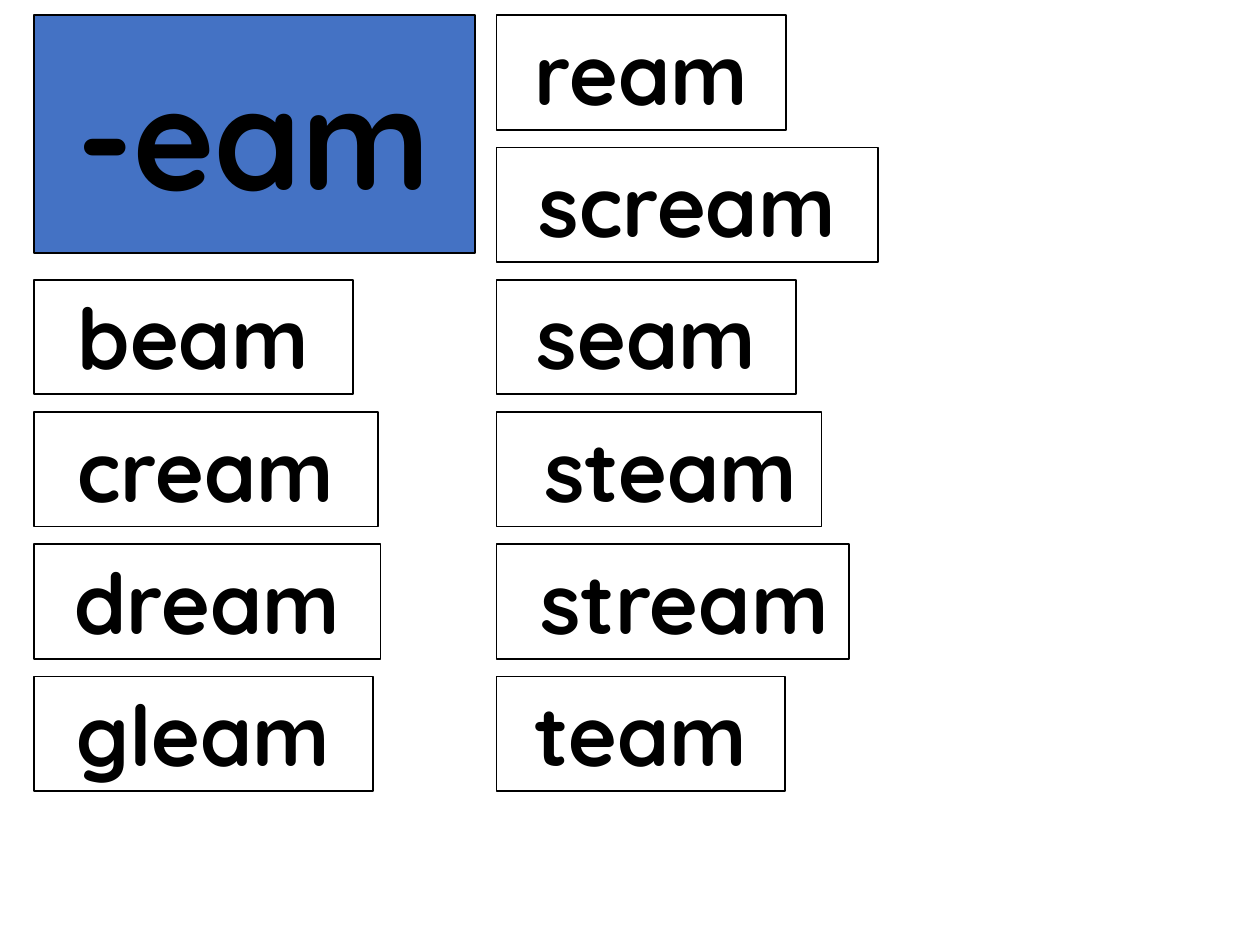
"""Build a word-family slide: the -eam ending and its word cards."""
from pptx import Presentation
from pptx.dml.color import RGBColor
from pptx.enum.shapes import MSO_SHAPE
from pptx.enum.text import MSO_ANCHOR, MSO_AUTO_SIZE, PP_ALIGN
from pptx.util import Inches, Pt

RECT = MSO_SHAPE.RECTANGLE
TOP, MIDDLE = MSO_ANCHOR.TOP, MSO_ANCHOR.MIDDLE
FIT, FIXED = MSO_AUTO_SIZE.SHAPE_TO_FIT_TEXT, MSO_AUTO_SIZE.NONE
CENTER = PP_ALIGN.CENTER

BLACK = RGBColor(0x00, 0x00, 0x00)
WHITE = RGBColor(0xFF, 0xFF, 0xFF)
BLUE = RGBColor(0x44, 0x72, 0xC4)
FONT = "Quicksand"

ENDING = "-eam"
COLUMNS = [
    {"left": 0.27, "first_row": 2, "cards": [
        ("beam", 2.53), ("cream", 2.73), ("dream", 2.75), ("gleam", 2.69)]},
    {"left": 3.94, "first_row": 0, "cards": [
        ("ream", 2.3), ("scream", 3.03), ("seam", 2.38),
        ("steam", 2.58), ("stream", 2.8), ("team", 2.29)]},
]
GRID_TOP, ROW_STEP, CARD_HEIGHT = 0.12, 1.05, 0.91
ENDING_WIDTH, ENDING_HEIGHT = 3.5, 1.89


def add_card(s, text, left, top, width, height, fill, size, anchor, wrap, fit):
    """Add one outlined card with centred bold text."""
    sp = s.shapes.add_shape(RECT, *map(Inches, (left, top, width, height)))
    sp.shadow.inherit = False
    sp.fill.solid()
    sp.fill.fore_color.rgb = fill
    sp.line.color.rgb = BLACK
    sp.line.width = Pt(1)
    tf = sp.text_frame
    tf.word_wrap = wrap
    tf.auto_size = fit
    tf.vertical_anchor = anchor
    p = tf.paragraphs[0]
    p.alignment = CENTER
    r = p.add_run()
    r.text = text
    r.font.name = FONT
    r.font.size = Pt(size)
    r.font.bold = True
    r.font.color.rgb = BLACK


def main():
    """Lay out the cards and save the slide."""
    prs = Presentation()
    prs.slide_width, prs.slide_height = Inches(10), Inches(7.5)
    s = prs.slides.add_slide(prs.slide_layouts[6])
    for column in COLUMNS:
        for row, (word, width) in enumerate(column["cards"], column["first_row"]):
            add_card(s, f" {word} ", column["left"], GRID_TOP + row * ROW_STEP,
                     width, CARD_HEIGHT, WHITE, 48, TOP, False, FIT)
    add_card(s, ENDING, COLUMNS[0]["left"], GRID_TOP, ENDING_WIDTH,
             ENDING_HEIGHT, BLUE, 80, MIDDLE, True, FIXED)
    prs.save("out.pptx")


if __name__ == "__main__":
    main()
